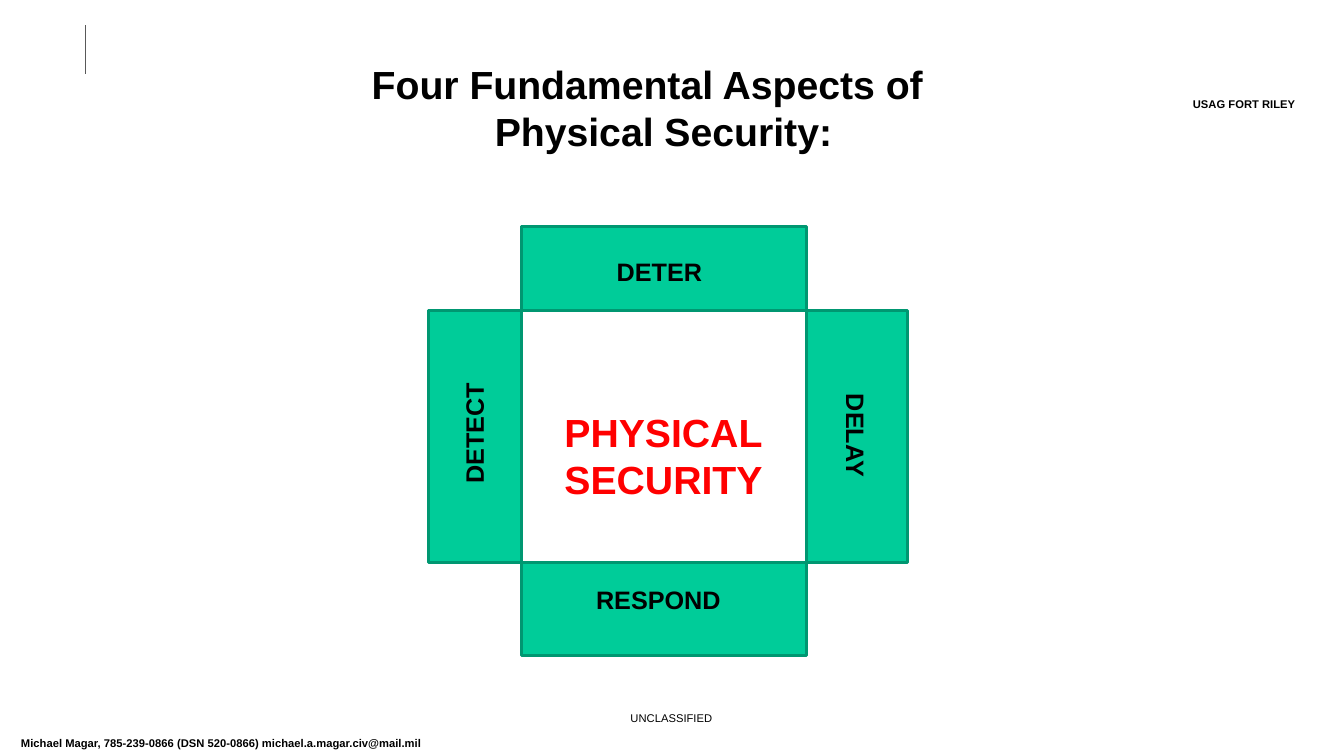
from pptx import Presentation
from pptx.dml.color import RGBColor
from pptx.enum.shapes import MSO_CONNECTOR, MSO_SHAPE
from pptx.enum.text import MSO_ANCHOR, MSO_AUTO_SIZE, PP_ALIGN
from pptx.oxml.ns import qn
from pptx.util import Inches, Pt
from lxml import etree

RECTANGLE = MSO_SHAPE.RECTANGLE
STRAIGHT = MSO_CONNECTOR.STRAIGHT
TOP = MSO_ANCHOR.TOP
NO_FIT = MSO_AUTO_SIZE.NONE
LEFT, CENTER = PP_ALIGN.LEFT, PP_ALIGN.CENTER

TITLE = "Four Fundamental Aspects of Physical Security:"
CORE = ["PHYSICAL", "SECURITY"]
NOTICES = [
    ("Michael Magar, 785-239-0866 (DSN 520-0866) michael.a.magar.civ@mail.mil",
     (0.11, 7.26, 8.3, 0.24), True, LEFT),
    ("UNCLASSIFIED", (4.91, 7.01, 3.5, 0.24), False, CENTER),
    ("USAG FORT RILEY", (11.46, 0.92, 1.76, 0.24), True, CENTER),
]

CORE_LEFT, CORE_TOP, CORE_WIDTH, CORE_HEIGHT = 5.17, 3.08, 2.83, 2.5
CORE_RIGHT, CORE_BOTTOM = CORE_LEFT + CORE_WIDTH, CORE_TOP + CORE_HEIGHT
TOP_DEPTH, SIDE_DEPTH, RIGHT_DEPTH = 0.83, 0.92, 1.0
ASPECTS = [
    ("DETER", (CORE_LEFT, CORE_TOP - TOP_DEPTH, CORE_WIDTH, TOP_DEPTH),
     (5.75, 2.49, 1.58, 0.4), 0),
    ("DELAY", (CORE_RIGHT, CORE_TOP, RIGHT_DEPTH, CORE_HEIGHT),
     (7.73, 4.12, 1.52, 0.4), 90),
    ("RESPOND", (CORE_LEFT, CORE_BOTTOM, CORE_WIDTH, SIDE_DEPTH),
     (5.48, 5.75, 2.1, 0.4), 0),
    ("DETECT", (CORE_LEFT - SIDE_DEPTH, CORE_TOP, SIDE_DEPTH, CORE_HEIGHT),
     (3.65, 4.1, 2.1, 0.4), 270),
]


def color(value):
    return RGBColor.from_string(value)


def inches(values):
    return [Inches(value) for value in values]


def write(box, lines, size=18, bold=True, ink="000000", align=CENTER):
    frame = box.text_frame
    frame.word_wrap = True
    frame.auto_size = NO_FIT
    frame.vertical_anchor = TOP
    for index, line in enumerate(lines):
        para = frame.paragraphs[0] if index == 0 else frame.add_paragraph()
        para.alignment = align
        span = para.add_run()
        span.text = line
        span.font.name = "Arial"
        span.font.size = Pt(size)
        span.font.bold = bold
        span.font.color.rgb = color(ink)


def add_text(page, lines, place, rotation=0, **style):
    box = page.shapes.add_textbox(*inches(place))
    box.rotation = rotation
    write(box, lines, **style)


def add_bar(page, place):
    bar = page.shapes.add_shape(RECTANGLE, *inches(place))
    bar.shadow.inherit = False
    bar.fill.solid()
    bar.fill.fore_color.rgb = color("00CC99")
    bar.line.color.rgb = color("009771")
    bar.line.width = Pt(2)


def add_title(page):
    title = page.shapes.title
    title.left, title.top, title.width, title.height = inches((3.17, 0.55, 6.5, 1.41))
    write(title, [TITLE], size=28)
    para = title.text_frame.paragraphs[0]
    para.line_spacing = 1.0
    properties = para._p.get_or_add_pPr()
    properties.set("marL", str(Inches(0.32)))
    properties.set("indent", str(-Inches(0.32)))


def add_rule(page):
    rule = page.shapes.add_connector(STRAIGHT, *inches((0.85, 0.25, 0.85, 0.73)))
    rule.line.color.rgb = color("595959")
    rule.line.width = Pt(0.75)
    etree.SubElement(rule._element.spPr, qn("a:effectLst"))


def main():
    deck = Presentation()
    deck.slide_width, deck.slide_height = inches((13.33, 7.5))
    page = deck.slides.add_slide(deck.slide_layouts[5])
    add_rule(page)
    for notice, place, bold, align in NOTICES:
        add_text(page, [notice], place, size=8, bold=bold, align=align)
    add_title(page)
    add_text(page, CORE, (5.5, 4, 2.31, 1.04), size=28, ink="FF0000", align=LEFT)
    for label, bar_place, label_place, rotation in ASPECTS:
        add_bar(page, bar_place)
        add_text(page, [label], label_place, rotation)
    deck.save("out.pptx")


if __name__ == "__main__":
    main()
